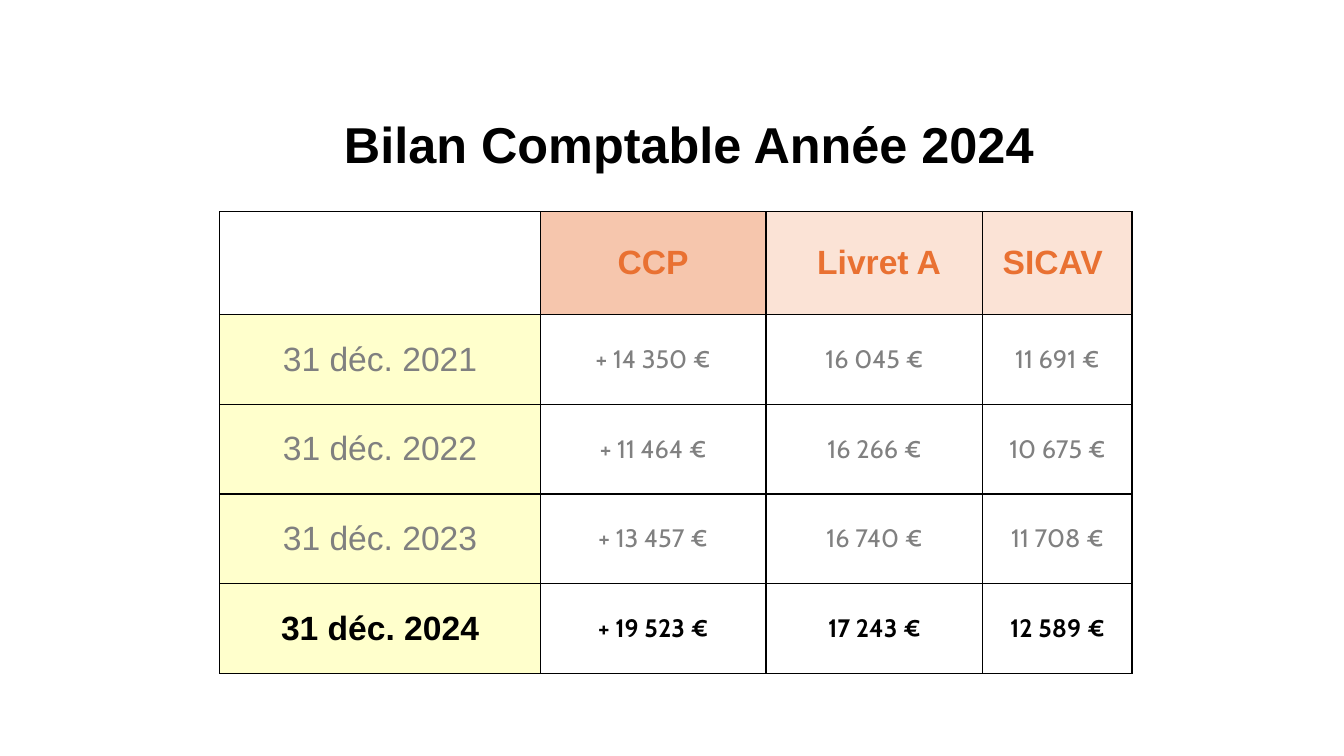
from lxml import etree
from pptx import Presentation
from pptx import util as u
from pptx.dml import color
from pptx.enum import text as t
from pptx.oxml import ns

HEADS = ["", "CCP", " Livret A", "SICAV "]
YEARS = [
    ["31 déc. 2021", "+ 14 350 €", "16 045 €", "11 691 €"],
    ["31 déc. 2022", "+ 11 464 €", "16 266 €", "10 675 €"],
    ["31 déc. 2023", "+ 13 457 €", "16 740 €", "11 708 €"],
    ["31 déc. 2024", "+ 19 523 €", "17 243 €", "12 589 €"],
]
TINTS = [None, "F6C6AD", "FBE3D6", "FBE3D6"]
COLS = [23.85, 16.8, 16.13, 11.1]
ROWS = [13.6] + [11.87] * len(YEARS)


def tone(code):
    return color.RGBColor.from_string(code)


def write(frame, words, size=24, font="Arial", ink="000000", bold=False):
    para = frame.paragraphs[0]
    para.alignment = t.PP_ALIGN.CENTER
    run = para.add_run()
    run.text = words
    run.font.size = u.Pt(size)
    run.font.name = font
    run.font.bold = bold
    run.font.color.rgb = tone(ink)


class Page:
    def __init__(self, deck):
        self.deck = deck
        self.slide = deck.slides.add_slide(deck.slide_layouts[5])
        self.line = "000000"

    def wide(self, share):
        return int(self.deck.slide_width * share / 100)

    def high(self, share):
        return int(self.deck.slide_height * share / 100)

    def title(self, words, x, y, w, h):
        box = self.slide.shapes.title
        box.left, box.top = self.wide(x), self.high(y)
        box.width, box.height = self.wide(w), self.high(h)
        frame = box.text_frame
        frame.word_wrap = False
        frame.auto_size = t.MSO_AUTO_SIZE.SHAPE_TO_FIT_TEXT
        write(frame, words, size=36, bold=True)

    def table(self, x, y, cols, rows):
        grid = self.slide.shapes.add_table(
            len(rows), len(cols), self.wide(x), self.high(y),
            self.wide(sum(cols)), self.high(sum(rows))).table
        grid.first_row = grid.horz_banding = False
        for col, share in zip(grid.columns, cols):
            col.width = self.wide(share)
        for row, share in zip(grid.rows, rows):
            row.height = self.high(share)
        return grid

    def cell(self, cell, words, fill=None, tight=False, **style):
        cell.vertical_anchor = t.MSO_ANCHOR.MIDDLE
        if tight:
            cell.margin_left = cell.margin_right = 0
            cell.margin_top = cell.margin_bottom = 0
        if fill:
            cell.fill.solid()
            cell.fill.fore_color.rgb = tone(fill)
        else:
            cell.fill.background()
        if words:
            write(cell.text_frame, words, **style)
        self.edge(cell)

    def edge(self, cell):
        props = cell._tc.get_or_add_tcPr()
        for spot, side in enumerate("LRTB"):
            line = etree.Element(ns.qn("a:ln" + side), w=str(u.Pt(1)))
            fill = etree.SubElement(line, ns.qn("a:solidFill"))
            etree.SubElement(fill, ns.qn("a:srgbClr"), val=self.line)
            props.insert(spot, line)


def main():
    deck = Presentation()
    deck.slide_width, deck.slide_height = u.Inches(13.33), u.Inches(7.5)
    page = Page(deck)
    page.title("Bilan Comptable Année 2024", 24.6, 14.27, 53.34, 9.47)
    grid = page.table(16.35, 28, COLS, ROWS)
    for c, (head, tint) in enumerate(zip(HEADS, TINTS)):
        page.cell(grid.cell(0, c), head, fill=tint, ink="E97132", bold=True)
    for r, (year, *sums) in enumerate(YEARS, 1):
        last = r == len(YEARS)
        look = {"ink": "000000" if last else "808080", "bold": last}
        page.cell(grid.cell(r, 0), year, fill="FFFFCC", **look)
        for c, value in enumerate(sums, 1):
            page.cell(grid.cell(r, c), value, tight=True,
                      size=18, font="Cabin", **look)
    deck.save("out.pptx")


if __name__ == "__main__":
    main()
